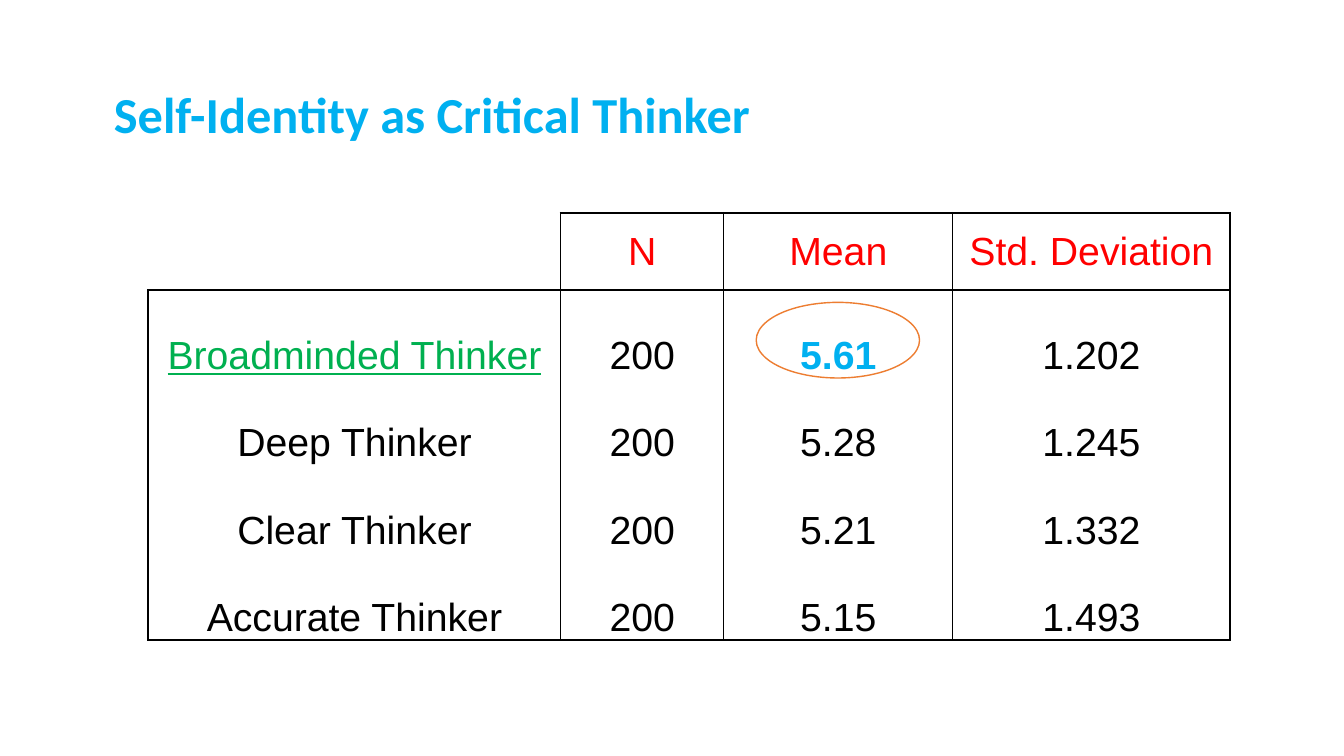
import pptx
import pptx.dml.color
import pptx.enum.shapes
import pptx.enum.text
import pptx.oxml
import pptx.oxml.ns
import pptx.util

Inches = pptx.util.Inches
RGBColor = pptx.dml.color.RGBColor
PP_ALIGN = pptx.enum.text.PP_ALIGN
MSO_ANCHOR = pptx.enum.text.MSO_ANCHOR

BLACK = RGBColor(0x00, 0x00, 0x00)
WHITE = RGBColor(0xFF, 0xFF, 0xFF)
RED = RGBColor(0xFF, 0x00, 0x00)
GREEN = RGBColor(0x00, 0xB0, 0x50)
BLUE = RGBColor(0x00, 0xB0, 0xF0)
ORANGE = RGBColor(0xED, 0x7D, 0x31)

COL_WIDTHS = [4.09, 1.62, 2.27, 2.75]
ROW_HEIGHTS = [0.77] + [0.86] * 4
ROWS = [
    ["", "N", "Mean", "Std. Deviation"],
    ["Broadminded Thinker", "200", "5.61", "1.202"],
    ["Deep Thinker", "200", "5.28", "1.245"],
    ["Clear Thinker", "200", "5.21", "1.332"],
    ["Accurate Thinker", "200", "5.15", "1.493"],
]
TITLE_FONT = {"name": "Calibri", "size": pptx.util.Pt(36), "bold": True}
CELL_FONT = {"name": "Arial", "size": pptx.util.Pt(28)}
# Cells that stand out: (row, column) -> colour and font values
ACCENTS = {(1, 0): (GREEN, {"underline": True}), (1, 2): (BLUE, {"bold": True})}


def set_attrs(obj, values):
    for name, value in values.items():
        setattr(obj, name, value)


def add_run(p, text, color, font):
    r = p.add_run()
    r.text = text
    set_attrs(r.font, font)
    r.font.color.rgb = color


def set_borders(cell, widths):
    """Draw the sides L, R, T, B at widths in points; 0 means no line."""
    tcPr = cell._tc.get_or_add_tcPr()
    for side, width in zip("LRTB", widths):
        fill = f'<a:solidFill><a:srgbClr val="{BLACK}"/></a:solidFill>' if width else "<a:noFill/>"
        tcPr.append(pptx.oxml.parse_xml(
            f'<a:ln{side} {pptx.oxml.ns.nsdecls("a")} w="{pptx.util.Pt(width)}">{fill}</a:ln{side}>'))


def border_widths(row, col):
    """Frame and header rule 1.5 pt, inner rules 1 pt, open top-left corner."""
    corner = row == 0 and col == 0
    verticals = [0 if row == 0 else 1.5, 1.5, 1, 1, 1.5]
    top = 1.5 if row == 1 or (row == 0 and not corner) else 0
    bottom = 1.5 if row in (0, len(ROWS) - 1) else 0
    return verticals[col], verticals[col + 1], top, bottom


def add_title(slide, left, top, width, height):
    sp = slide.shapes.title
    set_attrs(sp, {"left": left, "top": top, "width": width, "height": height})
    tf = sp.text_frame
    set_attrs(tf, {"word_wrap": False, "vertical_anchor": MSO_ANCHOR.TOP,
                   "auto_size": pptx.enum.text.MSO_AUTO_SIZE.NONE})
    p = tf.paragraphs[0]
    p.alignment = PP_ALIGN.LEFT
    add_run(p, "Self-Identity as Critical Thinker", BLUE, TITLE_FONT)


def add_highlight(slide, left, top, width, height):
    sp = slide.shapes.add_shape(pptx.enum.shapes.MSO_SHAPE.OVAL, left, top, width, height)
    sp.shadow.inherit = False
    sp.fill.solid()
    sp.fill.fore_color.rgb = WHITE
    sp.line.color.rgb = ORANGE
    sp.line.width = pptx.util.Pt(1)


def add_scores(slide, left, top, width, height):
    table = slide.shapes.add_table(len(ROWS), len(COL_WIDTHS), left, top, width, height).table
    set_attrs(table, {"first_row": False, "horz_banding": False})
    for column, w in zip(table.columns, COL_WIDTHS):
        column.width = Inches(w)
    for row, h in zip(table.rows, ROW_HEIGHTS):
        row.height = Inches(h)
    for i, texts in enumerate(ROWS):
        for j, text in enumerate(texts):
            cell = table.cell(i, j)
            set_borders(cell, border_widths(i, j))
            cell.fill.background()
            set_attrs(cell, {"margin_left": 0, "margin_right": 0, "margin_top": 0,
                             "margin_bottom": 0, "vertical_anchor": MSO_ANCHOR.MIDDLE})
            if text:
                p = cell.text_frame.paragraphs[0]
                p.alignment = PP_ALIGN.CENTER
                if i > 0:
                    p.line_spacing = 2.0
                color, extra = ACCENTS.get((i, j), (BLACK if i else RED, {}))
                add_run(p, text, color, {**CELL_FONT, **extra})


def main():
    prs = pptx.Presentation()
    prs.slide_width, prs.slide_height = Inches(13.33), Inches(7.5)
    slide = prs.slides.add_slide(prs.slide_layouts[5])
    # Title
    add_title(slide, Inches(1.03), Inches(0.77), Inches(6.6), Inches(0.71))
    # Ellipse behind the highest mean
    add_highlight(slide, Inches(7.5), Inches(3), Inches(1.62), Inches(0.75))
    # Table of scores
    add_scores(slide, Inches(1.47), Inches(2.11), Inches(sum(COL_WIDTHS)), Inches(sum(ROW_HEIGHTS)))
    prs.save("out.pptx")


if __name__ == "__main__":
    main()
